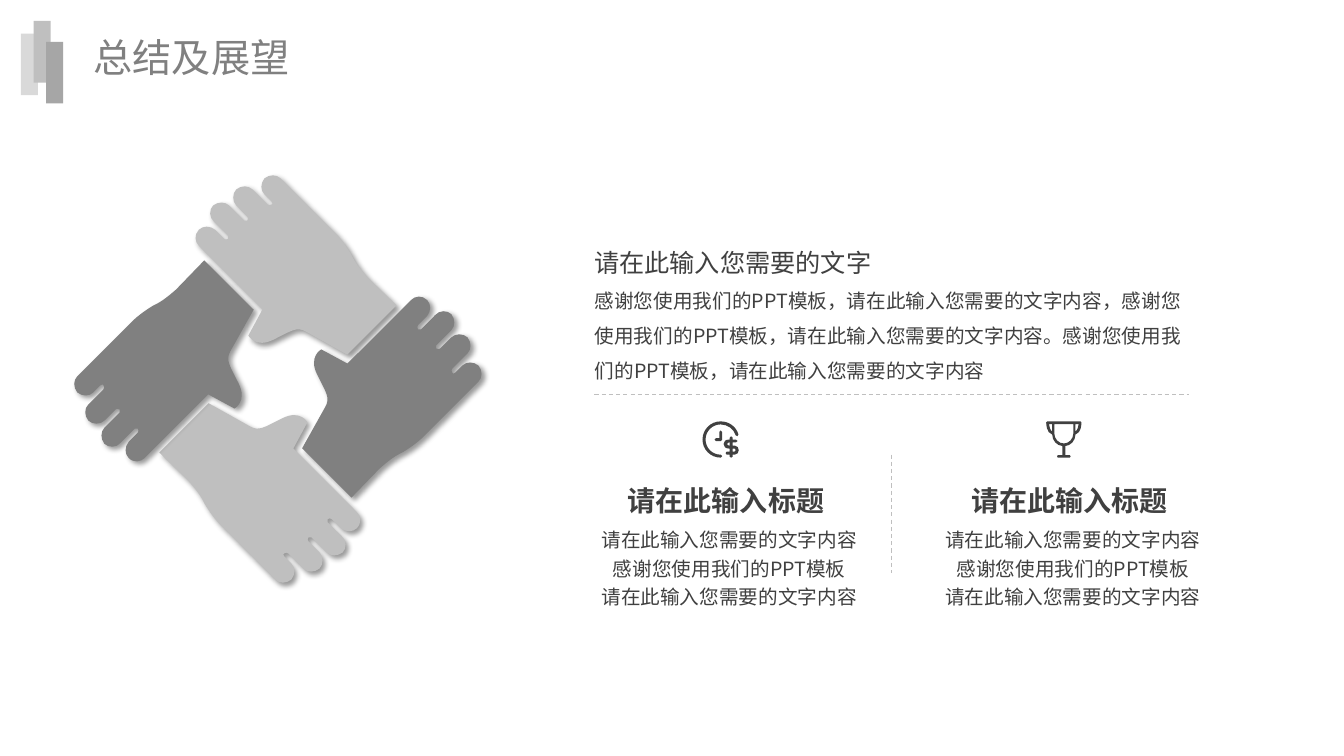
from lxml import etree
from pptx import Presentation
from pptx.dml.color import RGBColor as RGB
from pptx.enum.dml import MSO_LINE
from pptx.enum.shapes import MSO_CONNECTOR, MSO_SHAPE
from pptx.enum.text import MSO_AUTO_SIZE as AUTO, PP_ALIGN as ALIGN
from pptx.oxml import parse_xml
from pptx.oxml.ns import qn
from pptx.util import Pt

THEME = {
    "font": "Noto Sans CJK SC",
    "dark": "404040", "mid": "808080", "light": "BFBFBF",
    "bars": ("D9D9D9", "BFBFBF", "A6A6A6"),
    "title": 28, "lead": 18, "body": 14, "heading": 20,
    "rule": 0.75,
}
TITLE = "总结及展望"
LEAD = "请在此输入您需要的文字"
SUMMARY = (
    "感谢您使用我们的PPT模板，请在此输入您需要的文字内容，"
    "感谢您使用我们的PPT模板，请在此输入您需要的文字内容。"
    "感谢您使用我们的PPT模板，请在此输入您需要的文字内容"
)
DETAILS = ["请在此输入您需要的文字内容", "感谢您使用我们的PPT模板", "请在此输入您需要的文字内容"]

HAND = [
    (-19.9, 33.9), (-13.5, 37.5, -9.9, 34.6, 3.1, 28.1),
    (16.1, 21.6, 21.1, 31, 21.1, 31), (11, 49.7), (56.4, 95.1),
    (59.3, 97.9, 60, 103, 56.4, 106.6), (53.5, 109.5, 48.5, 109.5, 44.9, 106.6),
    (38.4, 100.1), (37.7, 99.4, 36.5, 99.4, 35.5, 100.1), (35.5, 102.3),
    (45.6, 112.3), (49.2, 115.2, 49.2, 121, 46.3, 123.9),
    (42.7, 126.7, 37.7, 126.7, 34.8, 123.9), (24, 113.1),
    (23.3, 112.7, 22.6, 112.7, 21.8, 113.1), (21.1, 114.5, 21.1, 115.2, 21.8, 115.9),
    (29.7, 123.9), (31.2, 125.3, 31.9, 127.5, 31.9, 129.6),
    (31.9, 131.8, 31.2, 133.9, 29.7, 135.4), (26.1, 138.3, 21.1, 138.3, 18.2, 135.4),
    (7.4, 124.6), (6.7, 123.9, 5.3, 123.9, 4.5, 124.6), (3.8, 125.3), (4.5, 126.7),
    (9.6, 131.8), (12.5, 134.7, 12.5, 139.7, 9.6, 143.3),
    (6, 146.2, 0.9, 146.2, -1.9, 143.3), (-40.8, 104.4),
    (-45.1, 100.1, -48.7, 95.1, -52.3, 89.3), (-55.2, 82.8, -59.5, 77.8, -63.9, 72.7),
    (-84.7, 52.6), (-49.5, 17.3),
]
CLOCK = [
    [(21.6, 19.4), (21.6, 21.6), (23, 21.6), (24.1, 21.6, 24.1, 19.4, 23, 19.4)],
    [(18.7, 15.1), (17, 15.1, 17, 17.3, 18.7, 17.3), (19.4, 17.3), (19.4, 15.1)],
    [(20.5, 10.8), (21.2, 10.8, 21.6, 11.5, 21.6, 12.2), (21.6, 13), (23.8, 13),
     (25.5, 13, 25.5, 15.1, 23.8, 15.1), (21.6, 15.1), (21.6, 17.3), (23, 17.3),
     (26.9, 17.3, 26.9, 23.8, 23, 23.8), (21.6, 23.8), (21.6, 25.2),
     (21.6, 26.2, 19.4, 26.2, 19.4, 25.2), (19.4, 23.8), (17.3, 23.8),
     (16.2, 23.8, 16.2, 21.6, 17.3, 21.6), (19.4, 21.6), (19.4, 19.4), (18.7, 19.4),
     (13.9, 19.4, 13.9, 13, 18.7, 13), (19.4, 13), (19.4, 12.2),
     (19.4, 11.5, 19.8, 10.8, 20.5, 10.8)],
    [(13, 6.5), (13.7, 6.5, 14.1, 7, 14.1, 7.6), (14.1, 13),
     (14.1, 13.7, 13.7, 14.1, 13, 14.1), (9.7, 14.1),
     (8.3, 14.1, 8.3, 12, 9.7, 12), (12, 12), (12, 7.6), (12, 7, 12.4, 6.5, 13, 6.5)],
    [(13, 0), (19.2, 0, 24.2, 4, 25.7, 9.4), (25.9, 10.8, 24.2, 11, 23.7, 10),
     (22.4, 5.5, 18, 2.2, 13, 2.2), (7, 2.2, 2.2, 7, 2.2, 13),
     (2.2, 19, 7, 23.8, 13, 23.8), (14.4, 23.8, 14.4, 25.9, 13, 25.9),
     (5.8, 25.9, 0, 20.2, 0, 13), (0, 5.8, 5.8, 0, 13, 0)],
]
TROPHY = [
    [(0.7, 0), (24.5, 0), (25.2, 0.7), (25.2, 1.4, 25.2, 8.3, 20.9, 9.4),
     (20.9, 13.7, 17.6, 17.3, 13.7, 17.6), (13.7, 24.1), (16.9, 24.1),
     (17.6, 24.1, 17.6, 25.9, 16.9, 25.9), (8.3, 25.9),
     (7.6, 25.9, 7.6, 24.1, 8.3, 24.1), (11.5, 24.1), (11.5, 17.6),
     (7.6, 17.3, 4.3, 13.7, 4.3, 9.4), (0, 8.3, 0, 1.4, 0, 0.7)],
    [(12.6, 15.8), (9, 15.8, 5.8, 12.6, 5.8, 8.6), (5.8, 2), (19.4, 2),
     (19.4, 8.6), (19.4, 12.6, 16.2, 15.8, 12.6, 15.8)],
    [(4.3, 7.2), (2.9, 6.5, 2.2, 3.6, 2, 2), (4.3, 2)],
    [(20.9, 7.2), (20.9, 2), (23.2, 2), (23, 3.6, 22.3, 6.5, 20.9, 7.2)],
]
COLUMNS = [("请在此输入标题", CLOCK), ("请在此输入标题", TROPHY)]


def put(target, values):
    for name, value in values.items():
        setattr(target, name, value)


def fill(shape, color):
    shape.fill.solid()
    shape.fill.fore_color.rgb = RGB.from_string(color)
    shape.line.fill.background()
    shape.shadow.inherit = False


def bend(shape, contours):
    corners = iter(list(shape._element.iter(qn("a:lnTo"))))
    for contour in contours:
        for segment in contour[1:]:
            steps = [next(corners) for _ in range(len(segment) // 2)]
            if len(steps) == 3:
                curve = etree.Element(qn("a:cubicBezTo"))
                steps[0].addprevious(curve)
                for step in steps:
                    curve.append(step[0])
                    step.getparent().remove(step)


def outline(slide, contours, left, top, color, quarter_turns=0):
    builder = None
    for contour in contours:
        points = [segment[i:i + 2] for segment in contour for i in range(0, len(segment), 2)]
        for _ in range(quarter_turns):
            points = [(-y, x) for x, y in points]
        points = [(Pt(left + x), Pt(top + y)) for x, y in points]
        if builder is None:
            builder = slide.shapes.build_freeform(*points[0], scale=1.0)
        else:
            builder.move_to(*points[0])
        builder.add_line_segments(points[1:], close=True)
    shape = builder.convert_to_shape()
    bend(shape, contours)
    fill(shape, color)
    return shape


def cast_shadow(shape):
    effects = shape._element.spPr.find(qn("a:effectLst"))
    effects.append(parse_xml(
        '<a:outerShdw xmlns:a="http://schemas.openxmlformats.org/drawingml/2006/main" '
        'blurRad="50800" dist="38100" dir="2700000" algn="tl" rotWithShape="0">'
        '<a:srgbClr val="000000"><a:alpha val="40000"/></a:srgbClr></a:outerShdw>'))


def rule(slide, x1, y1, x2, y2):
    line = slide.shapes.add_connector(MSO_CONNECTOR.STRAIGHT, Pt(x1), Pt(y1), Pt(x2), Pt(y2))
    line.line.color.rgb = RGB.from_string(THEME["light"])
    put(line.line, {"width": Pt(THEME["rule"]), "dash_style": MSO_LINE.DASH})
    etree.SubElement(line._element.spPr, qn("a:effectLst"))


def write(slide, box, lines, size, color="dark", wrap=True, bold=False, inset=(7.2, 3.6), **layout):
    frame = slide.shapes.add_textbox(*map(Pt, box)).text_frame
    across, down = map(Pt, inset)
    put(frame, {"word_wrap": wrap, "auto_size": AUTO.SHAPE_TO_FIT_TEXT,
                "margin_left": across, "margin_right": across,
                "margin_top": down, "margin_bottom": down})
    for index, line in enumerate(lines):
        paragraph = frame.paragraphs[0] if index == 0 else frame.add_paragraph()
        put(paragraph, layout)
        run = paragraph.add_run()
        run.text = line
        put(run.font, {"name": THEME["font"], "size": Pt(THEME[size]), "bold": bold})
        run.font.color.rgb = RGB.from_string(THEME[color])
        east_asian = etree.SubElement(run.font._element, qn("a:ea"))
        east_asian.set("typeface", THEME["font"])


def main():
    deck = Presentation()
    put(deck, {"slide_width": Pt(960), "slide_height": Pt(540)})
    slide = deck.slides.add_slide(deck.slide_layouts[6])

    for index, (top, color) in enumerate(zip((24, 15, 30), THEME["bars"])):
        bar = slide.shapes.add_shape(
            MSO_SHAPE.RECTANGLE, Pt(15 + 9 * index), Pt(top), Pt(12.2), Pt(44))
        fill(bar, color)
    write(slide, (59.8, 20.2, 156.2, 41), [TITLE], "title", "mid", wrap=False)

    for turn in range(4):
        color = THEME["mid" if turn % 2 else "light"]
        cast_shadow(outline(slide, [HAND], 198.5, 270.7, color, turn))

    write(slide, (417.3, 168.5, 318.2, 29.5), [LEAD], "lead", line_spacing=1.2)
    write(slide, (424.8, 197.8, 419, 72), [SUMMARY], "body", inset=(0, 0), line_spacing=1.5)
    rule(slide, 424.6, 281.5, 849.1, 281.5)
    rule(slide, 637, 324.7, 637, 409)

    for index, (heading, icon) in enumerate(COLUMNS):
        left = 401 + 245.5 * index
        outline(slide, icon, left + 100.8, 301, THEME["dark"])
        write(slide, (left + 39.5, 341.6, 156.2, 31.7), [heading], "heading",
              wrap=False, bold=True, alignment=ALIGN.CENTER)
        write(slide, (left, 370.5, 239.8, 67), DETAILS, "body",
              alignment=ALIGN.CENTER, line_spacing=1.2)

    deck.save("out.pptx")


if __name__ == "__main__":
    main()
